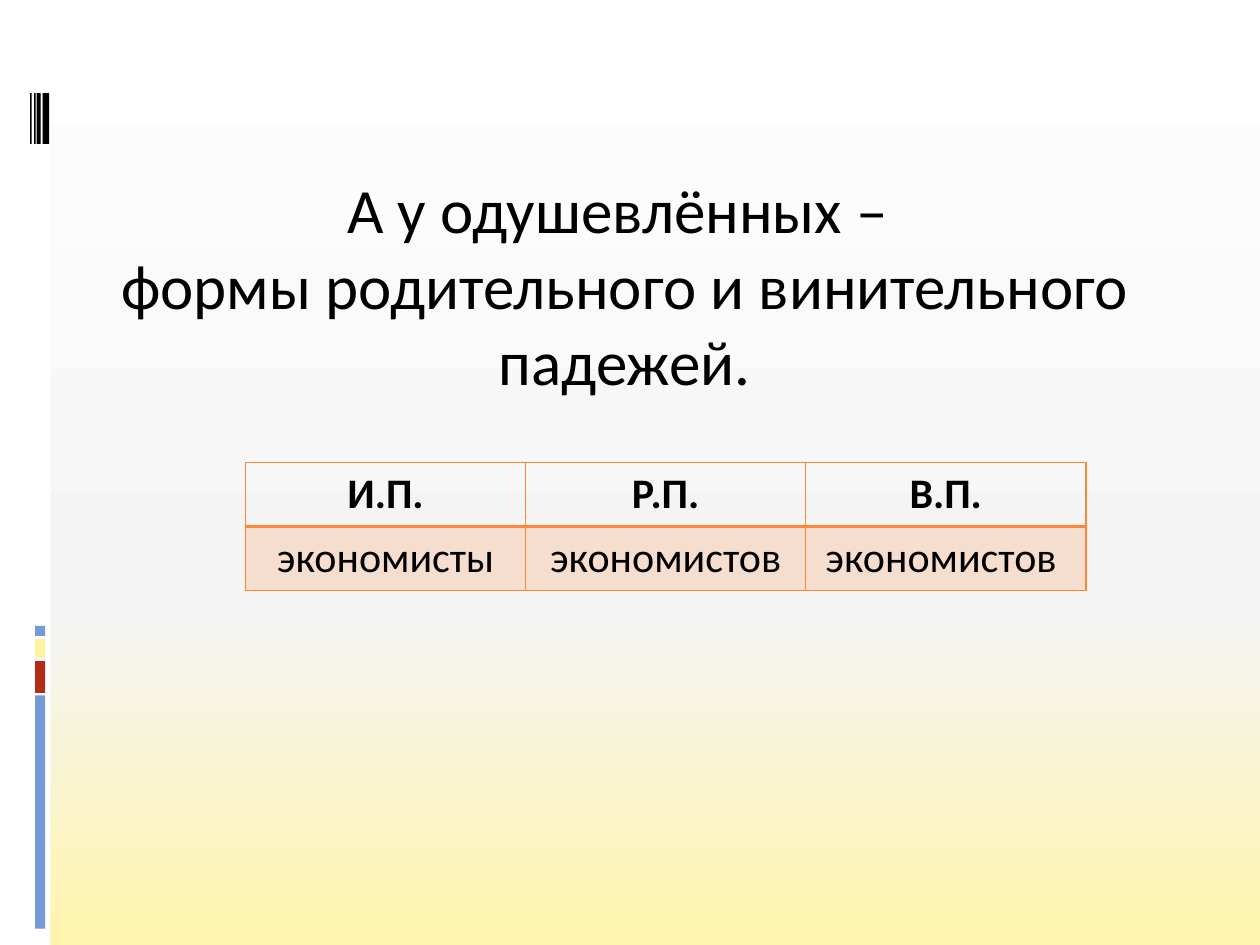
from dataclasses import dataclass

from lxml.etree import SubElement
from pptx import Presentation
from pptx.dml.color import RGBColor as RGB
from pptx.enum.shapes import MSO_SHAPE as SHAPE
from pptx.enum.text import MSO_ANCHOR as ANCHOR, MSO_AUTO_SIZE as AUTO, PP_ALIGN as ALIGN
from pptx.oxml.ns import qn
from pptx.util import Cm, Pt


@dataclass(frozen=True)
class Theme:
    font: str = "Calibri"
    title_size: int = 36
    table_size: int = 24
    text: str = "000000"
    white: str = "FFFFFF"
    blue: str = "7598D9"
    red: str = "B32C16"
    yellow: str = "FFF39D"
    orange: str = "FE8637"
    backdrop: tuple = ((0, "FFFFFF"), (65, "F4F4F4"), (100, "FFF4AD"))
    tint: int = 20
    thin: float = 1
    thick: float = 2


class SlideBuilder:
    def __init__(self, slide, theme):
        self.s = slide
        self.theme = theme

    def background(self):
        fill = self.s.background.fill
        fill.gradient()
        fill.gradient_angle = 270
        stops = self.s.element.find(".//" + qn("a:gsLst"))
        stops.clear()
        for position, color in self.theme.backdrop:
            stop = SubElement(stops, qn("a:gs"), pos=str(position * 1000))
            SubElement(stop, qn("a:srgbClr"), val=color)

    def bar(self, left, top, width, height, color):
        sp = self.s.shapes.add_shape(SHAPE.RECTANGLE, Cm(left), Cm(top), Cm(width), Cm(height))
        sp.shadow.inherit = False
        sp.fill.solid()
        sp.fill.fore_color.rgb = RGB.from_string(color)
        sp.line.fill.background()

    def style(self, p, size, bold=False):
        p.alignment = ALIGN.CENTER
        p.font.name = self.theme.font
        p.font.size = Pt(size)
        p.font.bold = bold
        p.font.color.rgb = RGB.from_string(self.theme.text)

    def title(self, lines, left, top, width, height):
        sp = self.s.shapes.title
        sp.left, sp.top, sp.width, sp.height = Cm(left), Cm(top), Cm(width), Cm(height)
        tf = sp.text_frame
        tf.word_wrap = True
        tf.auto_size = AUTO.NONE
        tf.vertical_anchor = ANCHOR.BOTTOM
        tf.margin_left, tf.margin_right = Cm(0.28), Cm(0.25)
        tf.margin_top, tf.margin_bottom = Cm(0.13), Cm(0.92)
        tf.text = "\n".join(lines)
        for p in tf.paragraphs:
            self.style(p, self.theme.title_size)

    def borders(self, cell, **widths):
        """Draw cell edges; the keywords are L, R, T and B, in points."""
        props = cell._tc.get_or_add_tcPr()
        for index, (side, width) in enumerate(widths.items()):
            ln = SubElement(props, qn(f"a:ln{side}"), w=str(Pt(width)))
            fill = SubElement(ln, qn("a:solidFill"))
            SubElement(fill, qn("a:srgbClr"), val=self.theme.orange)
            props.insert(index, ln)

    def tint(self, cell):
        cell.fill.solid()
        cell.fill.fore_color.rgb = RGB.from_string(self.theme.orange)
        color = cell._tc.tcPr.find(".//" + qn("a:srgbClr"))
        SubElement(color, qn("a:alpha"), val=str(self.theme.tint * 1000))

    def table(self, rows, left, top, width, row_height):
        t = self.theme
        table = self.s.shapes.add_table(
            len(rows), len(rows[0]), Cm(left), Cm(top), Cm(width), Cm(row_height * len(rows))
        ).table
        table.horz_banding = False
        for i, row in enumerate(rows):
            header = i == 0
            for j, text in enumerate(row):
                cell = table.cell(i, j)
                cell.text = text
                self.style(cell.text_frame.paragraphs[0], t.table_size, bold=header)
                if header:
                    cell.fill.background()
                else:
                    self.tint(cell)
                self.borders(
                    cell, L=t.thin, R=t.thin,
                    T=t.thin if header else t.thick,
                    B=t.thick if header else t.thin,
                )


def main():
    prs = Presentation()
    prs.slide_width, prs.slide_height = Cm(25.4), Cm(19.05)
    title_only = prs.slide_layouts[5]
    theme = Theme()
    slide = SlideBuilder(prs.slides.add_slide(title_only), theme)

    slide.background()
    slide.bar(0, 0, 1.02, 19.05, theme.white)
    for left, width in ((0.86, 0.13), (0.74, 0.08), (0.69, 0.03), (0.61, 0.03)):
        slide.bar(left, 1.88, width, 1.02, theme.text)
    for top, height, color in (
        (14.02, 4.7, theme.blue),
        (13.33, 0.64, theme.red),
        (12.88, 0.38, theme.yellow),
        (12.62, 0.2, theme.blue),
    ):
        slide.bar(0.71, top, 0.2, height, color)

    slide.title(
        ["А у одушевлённых – ", "формы родительного и винительного падежей."],
        0.58, 2.18, 24, 6.76,
    )
    slide.table(
        [["И.П.", "Р.П.", "В.П."], ["экономисты", "экономистов", "экономистов "]],
        4.95, 9.32, 16.94, 1.29,
    )
    prs.save("out.pptx")


if __name__ == "__main__":
    main()
